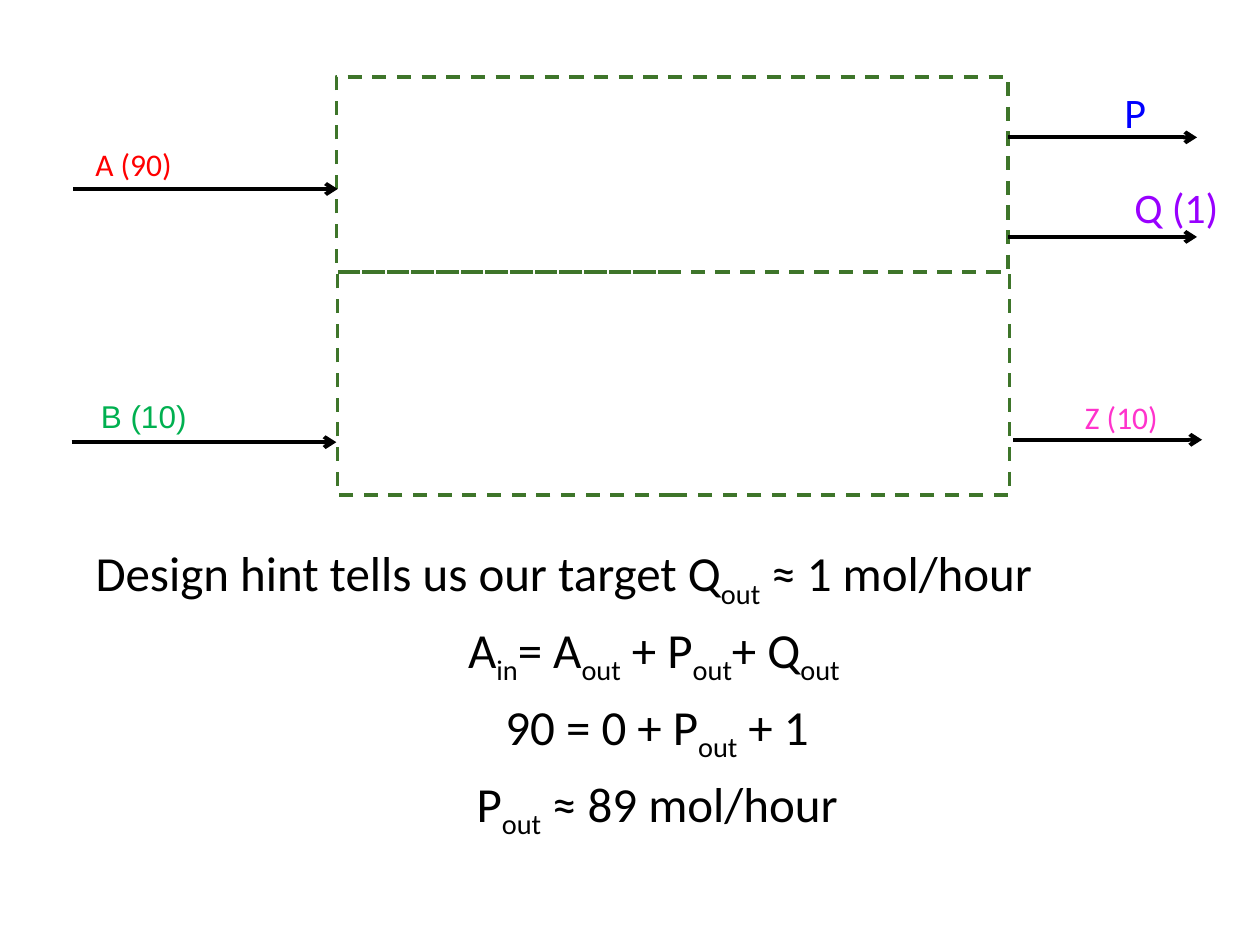
"""Build the two-chamber mass balance slide with its design equations."""
import pptx
import pptx.util
import pptx.dml.color
import pptx.enum.dml
import pptx.enum.shapes
import pptx.enum.text
import pptx.oxml.ns
import lxml.etree

Pt = pptx.util.Pt
ALIGN = pptx.enum.text.PP_ALIGN
COLOURS = {
    "chamber": "3E752A",
    "ink": "000000",
    "A": "FF0000",
    "B": "00B050",
    "P": "0000FF",
    "Q": "9900FF",
    "Z": "FF33CC",
}


class FlowSlide:
    """Holds the style and the current slide."""

    def __init__(self, slide):
        """Keep the slide and the default font."""
        self.slide = slide
        self.font = "Calibri"

    def colour(self, key):
        """Return the named colour."""
        return pptx.dml.color.RGBColor.from_string(COLOURS[key])

    def chamber(self, left, top, width, height):
        """Draw a dashed, unfilled chamber."""
        chamber = self.slide.shapes.add_shape(
            pptx.enum.shapes.MSO_SHAPE.RECTANGLE,
            Pt(left), Pt(top), Pt(width), Pt(height))
        chamber.shadow.inherit = False
        chamber.fill.background()
        chamber.line.color.rgb = self.colour("chamber")
        chamber.line.width = Pt(2)
        chamber.line.dash_style = pptx.enum.dml.MSO_LINE.DASH

    def stream(self, left, y, length):
        """Draw a horizontal arrow pointing right."""
        stream = self.slide.shapes.add_connector(
            pptx.enum.shapes.MSO_CONNECTOR.STRAIGHT,
            Pt(left), Pt(y), Pt(left + length), Pt(y))
        stream.line.color.rgb = self.colour("ink")
        stream.line.width = Pt(2.25)
        qn = pptx.oxml.ns.qn
        lxml.etree.SubElement(stream.line._get_or_add_ln(), qn("a:tailEnd"), type="arrow")
        lxml.etree.SubElement(stream._element.spPr, qn("a:effectLst"))

    def text_frame(self, left, top, width, height):
        """Add a wrapping text box and return its frame."""
        frame = self.slide.shapes.add_textbox(
            Pt(left), Pt(top), Pt(width), Pt(height)).text_frame
        frame.word_wrap = True
        return frame

    def run(self, paragraph, text, size, colour, font=None):
        """Add one styled run and return it."""
        run = paragraph.add_run()
        run.text = text
        run.font.name = font or self.font
        run.font.size = Pt(size)
        run.font.color.rgb = self.colour(colour)
        return run

    def label(self, text, left, top, width, height, size, colour, font=None):
        """Add a centred stream label."""
        frame = self.text_frame(left, top, width, height)
        frame.auto_size = pptx.enum.text.MSO_AUTO_SIZE.SHAPE_TO_FIT_TEXT
        frame.paragraphs[0].alignment = ALIGN.CENTER
        self.run(frame.paragraphs[0], text, size, colour, font)

    def equations(self, lines, left, top, width, height, size):
        """Add lines whose every second piece is a subscript, all but the first centred."""
        frame = self.text_frame(left, top, width, height)
        for row, pieces in enumerate(lines):
            paragraph = frame.add_paragraph() if row else frame.paragraphs[0]
            paragraph.alignment = ALIGN.CENTER if row else ALIGN.LEFT
            paragraph.space_before = Pt(0.2 * size)
            for position, piece in enumerate(pieces):
                run = self.run(paragraph, piece, size, "ink")
                if position % 2:
                    run.font._element.set("baseline", "-25000")


def main():
    """Build and save the slide."""
    deck = pptx.Presentation()
    deck.slide_width, deck.slide_height = Pt(720), Pt(540)
    flow = FlowSlide(deck.slides.add_slide(deck.slide_layouts[6]))

    flow.chamber(192.2, 43.9, 383.8, 111.6)
    flow.chamber(193, 155.5, 383.8, 127.4)

    inlet, outlet = 151.2, 108
    for left, y, length in [
        (41.8, 108, inlet), (41, 252.7, inlet),
        (576, 78.5, outlet), (576, 135.4, outlet), (578.9, 251.3, outlet),
    ]:
        flow.stream(left, y, length)

    flow.label("A (90)", 41, 79.2, 70.6, 28.8, 18, "A")
    flow.label("B (10)", 43.2, 223.2, 77.8, 28.8, 18, "B", "Arial")
    flow.label("P", 632.9, 46.1, 31.7, 36, 24, "P")
    flow.label("Q", 617, 100.1, 78.5, 36, 24, "Q")
    flow.label("(1)", 643.7, 100.1, 78.5, 36, 24, "Q")
    flow.label("Z (10)", 568.8, 223.9, 144, 28.8, 18, "Z")

    flow.equations([
        ["Design hint tells us our target Q", "out", " ≈ 1 mol/hour"],
        ["A", "in", "= A", "out", " + P", "out", "+ Q", "out "],
        ["90 = 0 + P", "out", " + 1"],
        ["P", "out", " ≈ 89 mol/hour"],
    ], 47.5, 306.7, 655.9, 177.1, 28)

    deck.save("out.pptx")


if __name__ == "__main__":
    main()
